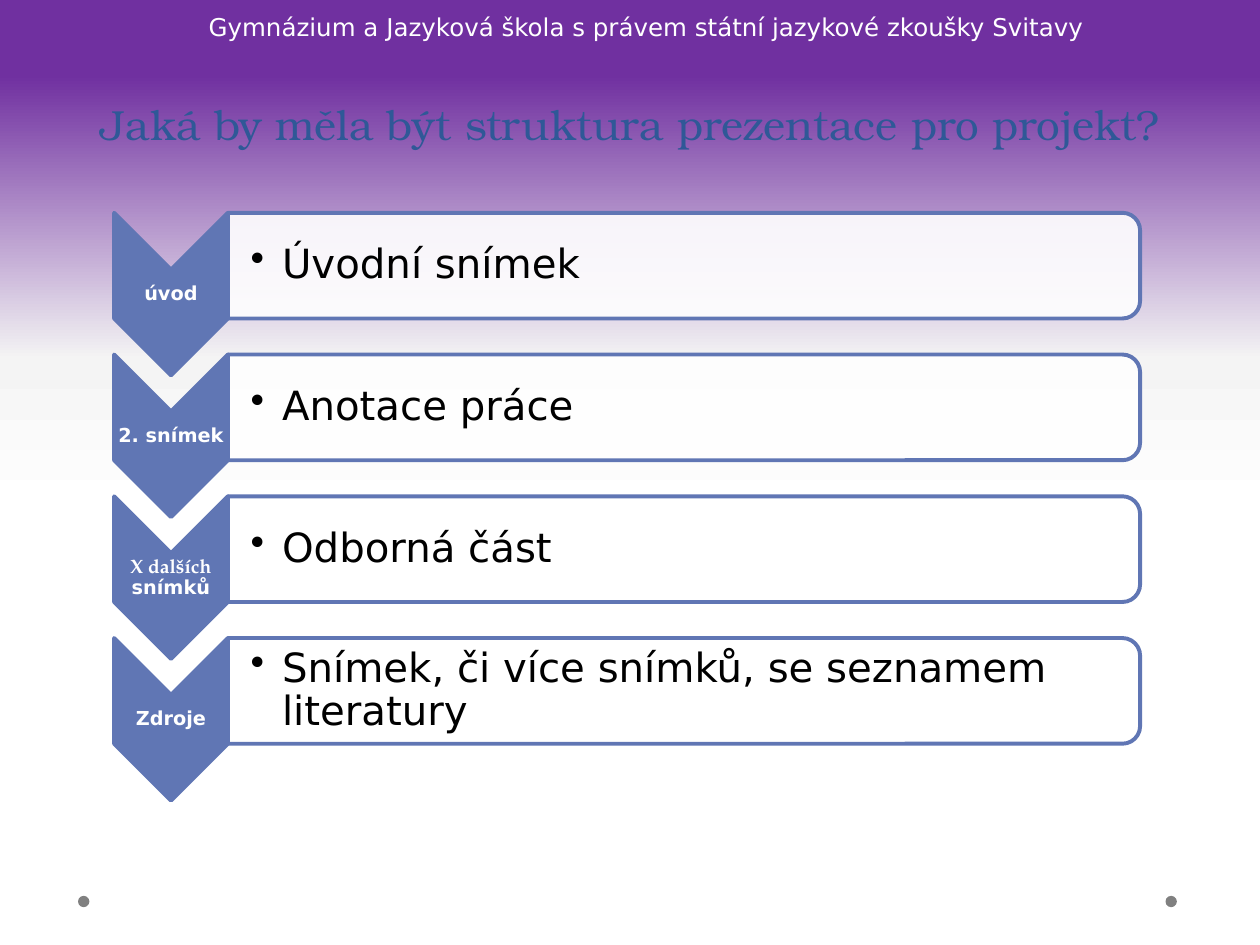
"""Build a slide outlining the recommended structure of a project presentation."""
from copy import deepcopy

from lxml.etree import SubElement
from pptx import Presentation
from pptx.dml.color import RGBColor
from pptx.enum.shapes import MSO_SHAPE
from pptx.enum.text import MSO_ANCHOR, PP_ALIGN
from pptx.oxml.ns import qn
from pptx.util import Pt

SANS, TITLE_FONT, SERIF = "DejaVu Sans", "TeX Gyre Bonum", "TeX Gyre Pagella"
WHITE, BLACK, BLUE, NAVY, GREY = "FFFFFF", "000000", "6076B4", "2F5897", "808080"
BACKDROP = [(0.46, WHITE), (0.62, "F4F4F4"), (0.92, "7030A0")]

SCHOOL = "Gymnázium a Jazyková škola s právem státní jazykové zkoušky Svitavy"
TITLE = "Jaká by měla být struktura prezentace pro projekt?"
STEPS = [
    ([("úvod", SANS)], "Úvodní snímek"),
    ([("2. snímek", SANS)], "Anotace práce"),
    ([("X dalších ", SERIF), ("snímků", SANS)], "Odborná část"),
    ([("Zdroje", SANS)], "Snímek, či více snímků, se seznamem literatury"),
]

STEP_TOP, STEP_PITCH = 121.6, 81
CHEVRON_LEFT, CHEVRON_WIDTH, CHEVRON_HEIGHT = 65.2, 65, 92.9
PANEL_LEFT, PANEL_WIDTH, PANEL_HEIGHT = 130.2, 521.3, 60.4
PANEL_PADDING, BULLET_INDENT = 3, 18
DOT_LEFTS, DOT_TOP, DOT_SIZE = (666, 44.6), 511.9, 6.5


def color(value):
    return RGBColor.from_string(value)


def paint_background(slide):
    fill = slide.background.fill
    fill.gradient()
    fill.gradient_angle = 90
    stop_list = slide.background._cSld.find(".//" + qn("a:gsLst"))
    stop_list.append(deepcopy(stop_list[0]))
    for stop, (position, value) in zip(fill.gradient_stops, BACKDROP):
        stop.position = position
        stop.color.rgb = color(value)


def add_filled(slide, kind, left, top, width, height, fill):
    shape = slide.shapes.add_shape(kind, Pt(left), Pt(top), Pt(width), Pt(height))
    shape.shadow.inherit = False
    shape.fill.solid()
    shape.fill.fore_color.rgb = color(fill)
    shape.line.fill.background()
    return shape


def add_turned(slide, kind, left, top, width, height, fill):
    shift = (width - height) / 2
    shape = add_filled(slide, kind, left + shift, top - shift, height, width, fill)
    shape.rotation = 90
    shape.line.color.rgb = color(BLUE)
    shape.line.width = Pt(2.25)
    return shape


def add_text(slide, frame, runs, size, fill, bold=False, anchor=MSO_ANCHOR.TOP,
             align=PP_ALIGN.CENTER, spacing=None, insets=(7.2, 3.6, 7.2, 3.6), wrap=True):
    text_frame = slide.shapes.add_textbox(*map(Pt, frame)).text_frame
    text_frame.word_wrap = wrap
    text_frame.vertical_anchor = anchor
    (text_frame.margin_left, text_frame.margin_top,
     text_frame.margin_right, text_frame.margin_bottom) = map(Pt, insets)
    paragraph = text_frame.paragraphs[0]
    paragraph.alignment = align
    paragraph.line_spacing = spacing
    for text, font_name in runs:
        run = paragraph.add_run()
        run.text = text
        run.font.name = font_name
        run.font.size = Pt(size)
        run.font.bold = bold
        run.font.color.rgb = color(fill)
    return paragraph


def add_bullet(paragraph):
    properties = paragraph._p.get_or_add_pPr()
    properties.set("marL", str(Pt(BULLET_INDENT)))
    properties.set("indent", str(-Pt(BULLET_INDENT)))
    SubElement(properties, qn("a:buChar")).set("char", "•")


def add_step(slide, top, label, content):
    add_turned(slide, MSO_SHAPE.CHEVRON, CHEVRON_LEFT, top,
               CHEVRON_WIDTH, CHEVRON_HEIGHT, BLUE)
    label_frame = (CHEVRON_LEFT, top + CHEVRON_WIDTH / 2,
                   CHEVRON_WIDTH, CHEVRON_HEIGHT - CHEVRON_WIDTH)
    add_text(slide, label_frame, label, 11, WHITE, bold=True, anchor=MSO_ANCHOR.MIDDLE,
             spacing=0.9, insets=(0.7, 0.7, 0.7, 0.7))

    panel = add_turned(slide, MSO_SHAPE.ROUND_2_SAME_RECTANGLE, PANEL_LEFT, top,
                       PANEL_WIDTH, PANEL_HEIGHT, WHITE)
    panel_color = panel._element.spPr.find(qn("a:solidFill"))[0]
    SubElement(panel_color, qn("a:alpha")).set("val", "90000")
    content_frame = (PANEL_LEFT, top + PANEL_PADDING,
                     PANEL_WIDTH - PANEL_PADDING, PANEL_HEIGHT - 2 * PANEL_PADDING)
    add_bullet(add_text(slide, content_frame, [(content, SANS)], 23, BLACK,
                        anchor=MSO_ANCHOR.MIDDLE, align=PP_ALIGN.LEFT, spacing=0.9,
                        insets=(13, 1.4, 1.4, 1.4)))


def main():
    presentation = Presentation()
    presentation.slide_width, presentation.slide_height = Pt(720), Pt(540)
    slide = presentation.slides.add_slide(presentation.slide_layouts[6])
    paint_background(slide)
    for left in DOT_LEFTS:
        add_filled(slide, MSO_SHAPE.OVAL, left, DOT_TOP, DOT_SIZE, DOT_SIZE, GREY)
    add_text(slide, (106.6, 3.6, 525.6, 24.5), [(SCHOOL, SANS)], 14, WHITE, wrap=False)
    add_text(slide, (36, 25.2, 648, 63.4), [(TITLE, TITLE_FONT)], 24, NAVY,
             anchor=MSO_ANCHOR.BOTTOM, spacing=Pt(58))
    for row, (label, content) in enumerate(STEPS):
        add_step(slide, STEP_TOP + row * STEP_PITCH, label, content)
    presentation.save("out.pptx")


if __name__ == "__main__":
    main()
